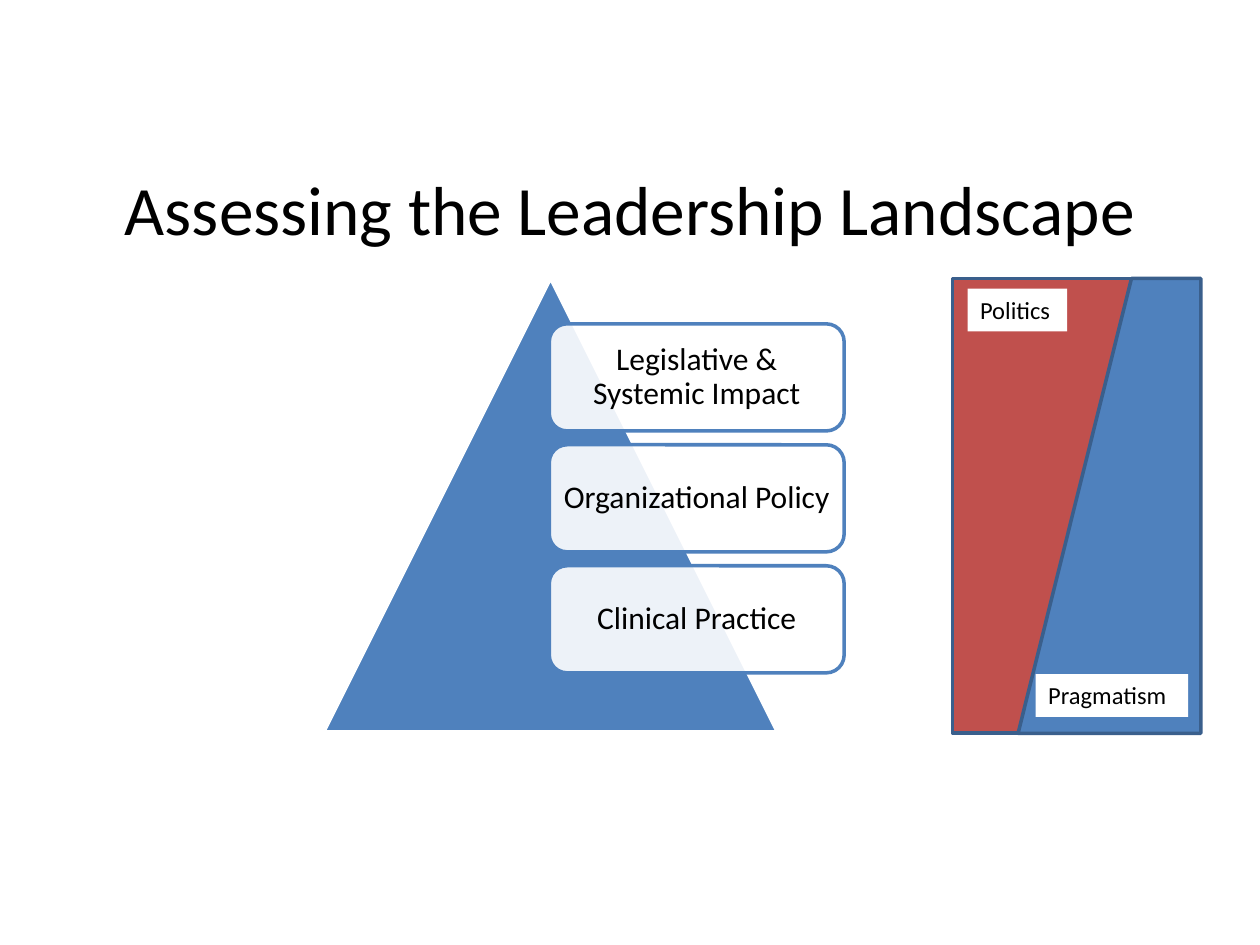
from lxml.etree import SubElement
from pptx import Presentation
from pptx.dml.color import RGBColor
from pptx.enum.shapes import MSO_SHAPE
from pptx.enum.text import MSO_ANCHOR, PP_ALIGN
from pptx.oxml.ns import qn
from pptx.util import Inches, Pt

BLUE, RED, EDGE = "4F81BD", "C0504D", "3A5F8C"
WHITE, BLACK = "FFFFFF", "000000"


def color(code):
    return RGBColor.from_string(code)


def paint(shape, fill, line=None, alpha=None):
    shape.shadow.inherit = False
    shape.fill.solid()
    shape.fill.fore_color.rgb = color(fill)
    if alpha is not None:
        tint = shape.fill._xPr.find(qn("a:solidFill"))[0]
        SubElement(tint, qn("a:alpha"), val=str(alpha * 1000))
    if line:
        shape.line.color.rgb = color(line)
        shape.line.width = Pt(2)
    else:
        shape.line.fill.background()


def add_box(slide, kind, left, top, width, height, fill, **style):
    box = slide.shapes.add_shape(
        kind, Inches(left), Inches(top), Inches(width), Inches(height))
    paint(box, fill, **style)
    return box


def add_free(slide, points, fill, line):
    spots = [(Inches(x), Inches(y)) for x, y in points]
    pen = slide.shapes.build_freeform(*spots[0])
    pen.add_line_segments(spots[1:], close=True)
    paint(pen.convert_to_shape(), fill, line)


def write(shape, text, size, align=PP_ALIGN.CENTER, anchor=MSO_ANCHOR.MIDDLE,
          inset=None, spacing=None):
    frame = shape.text_frame
    frame.word_wrap = True
    frame.vertical_anchor = anchor
    if inset is not None:
        frame.margin_left = frame.margin_right = Inches(inset)
        frame.margin_top = frame.margin_bottom = Inches(inset)
    para = frame.paragraphs[0]
    para.text = text
    para.alignment = align
    if spacing:
        para.line_spacing = spacing
    para.font.name = "Calibri"
    para.font.size = Pt(size)
    para.font.color.rgb = color(BLACK)


def add_tag(slide, text, left, top, width):
    tag = add_box(slide, MSO_SHAPE.RECTANGLE, left, top, width, 0.34, WHITE)
    write(tag, text, 14, align=PP_ALIGN.LEFT, anchor=MSO_ANCHOR.TOP)


def main():
    deck = Presentation()
    deck.slide_width, deck.slide_height = Inches(10), Inches(7.5)
    slide = deck.slides.add_slide(deck.slide_layouts[6])

    # Pyramid with its three levels
    add_box(slide, MSO_SHAPE.ISOSCELES_TRIANGLE, 2.57, 2.21, 3.6, 3.6, BLUE,
            line=WHITE)
    levels = ["Legislative & Systemic Impact", "Organizational Policy",
              "Clinical Practice"]
    for i, text in enumerate(levels):
        level = add_box(slide, MSO_SHAPE.ROUNDED_RECTANGLE, 4.36,
                        2.57 + 0.96 * i, 2.34, 0.85, WHITE, line=BLUE,
                        alpha=90)
        write(level, text, 18, inset=0.07, spacing=0.9)

    # Balance of politics and pragmatism
    add_box(slide, MSO_SHAPE.RECTANGLE, 7.56, 2.21, 1.88, 3.61, RED, line=EDGE)
    add_free(slide, [(8.98, 2.21), (9.53, 2.21), (9.53, 5.82), (8.08, 5.82)],
             BLUE, EDGE)
    add_tag(slide, "Politics", 7.68, 2.29, 0.79)
    add_tag(slide, "Pragmatism", 8.22, 5.35, 1.21)

    # Title
    title = slide.shapes.add_textbox(
        Inches(0.69), Inches(1.24), Inches(8.62), Inches(0.81))
    write(title, "Assessing the Leadership Landscape", 39.6)

    deck.save("out.pptx")


if __name__ == "__main__":
    main()
